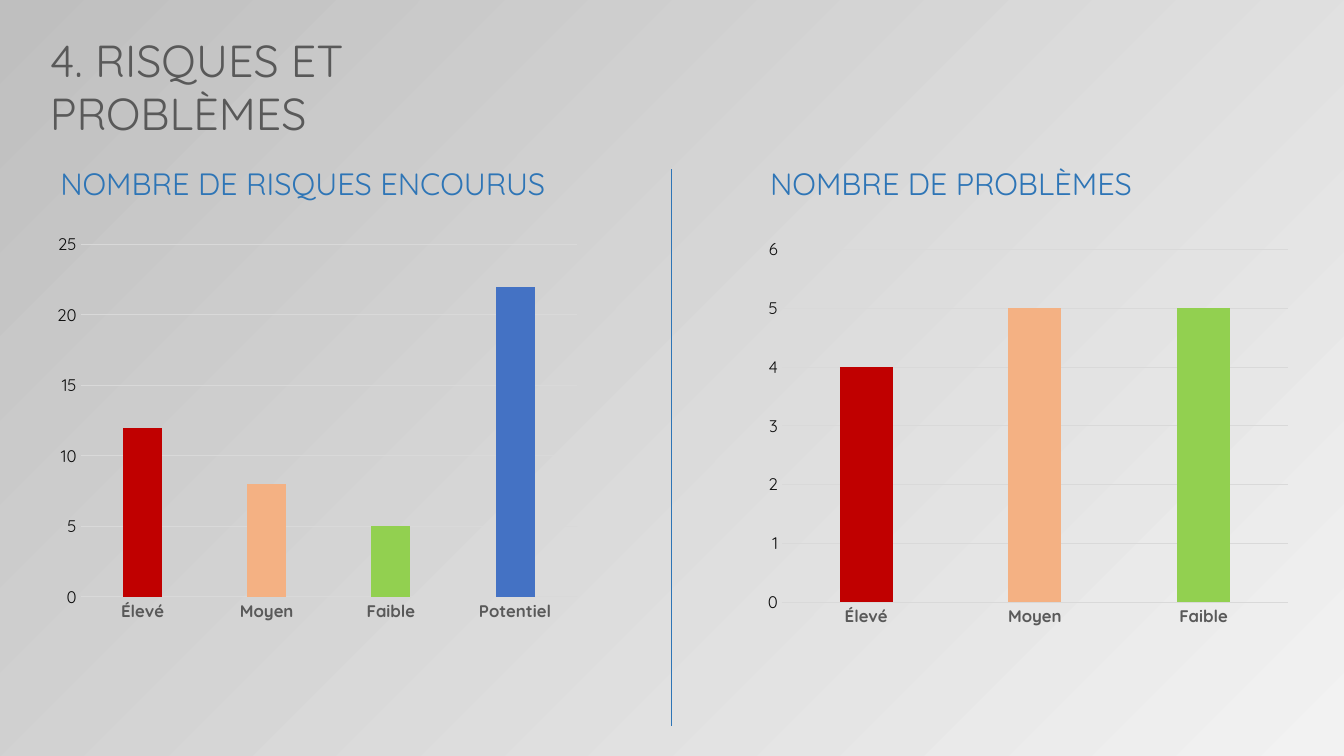
import pptx
import pptx.chart.data
import pptx.dml.color
import pptx.enum.chart
import pptx.enum.text
import pptx.oxml
import pptx.util

RGBColor = pptx.dml.color.RGBColor
EMU_PER_PX = 9525
FONT = "Quicksand"

LIGHT_GREY = RGBColor(0xF2, 0xF2, 0xF2)
MID_GREY = RGBColor(0xBF, 0xBF, 0xBF)
GRID_GREY = RGBColor(0xD9, 0xD9, 0xD9)
TEXT_GREY = RGBColor(0x59, 0x59, 0x59)
NEAR_BLACK = RGBColor(0x0D, 0x0D, 0x0D)
BLACK = RGBColor(0x00, 0x00, 0x00)
HEADING_BLUE = RGBColor(0x2E, 0x75, 0xB6)
BAR_BLUE = RGBColor(0x44, 0x72, 0xC4)
RED = RGBColor(0xC0, 0x00, 0x00)
ORANGE = RGBColor(0xF4, 0xB1, 0x83)
GREEN = RGBColor(0x92, 0xD0, 0x50)

LEVELS = {"Élevé": RED, "Moyen": ORANGE, "Faible": GREEN, "Potentiel": BAR_BLUE}


def px(*lengths):
    return [pptx.util.Emu(length * EMU_PER_PX) for length in lengths]


def set_attributes(target, values):
    for name, value in values.items():
        setattr(target, name, value)


def format_font(font, size, color, bold=False):
    set_attributes(font, {"name": FONT, "size": pptx.util.Pt(size), "bold": bold})
    font.color.rgb = color


def format_line(line, color, width):
    line.color.rgb = color
    line.width = pptx.util.Pt(width)


def set_background(slide):
    fill = slide.background.fill
    fill.gradient()
    fill.gradient_angle = 135
    for stop, color, position in zip(fill.gradient_stops, (LIGHT_GREY, MID_GREY), (0, 1)):
        stop.color.rgb = color
        stop.position = position


def add_text(slide, box, text, size, color):
    frame = slide.shapes.add_textbox(*px(*box)).text_frame
    set_attributes(frame, {
        "word_wrap": True,
        "auto_size": pptx.enum.text.MSO_AUTO_SIZE.SHAPE_TO_FIT_TEXT,
    })
    run = frame.paragraphs[0].add_run()
    run.text = text
    format_font(run.font, size, color)


def add_level_chart(slide, box, values, maximum, step):
    categories = list(LEVELS)[:len(values)]
    data = pptx.chart.data.CategoryChartData()
    data.categories = categories
    data.add_series("Series 1", values)
    chart = slide.shapes.add_chart(
        pptx.enum.chart.XL_CHART_TYPE.COLUMN_CLUSTERED, *px(*box), data).chart
    set_attributes(chart, {"has_title": False, "has_legend": False})
    format_font(chart.font, 10, BLACK)

    plot = chart.plots[0]
    set_attributes(plot, {"gap_width": 219, "overlap": -5, "vary_by_categories": False})
    series = plot.series[0]
    series.format.fill.solid()
    series.format.fill.fore_color.rgb = BAR_BLUE
    for index, category in enumerate(categories):
        if LEVELS[category] != BAR_BLUE:
            fill = series.points[index].format.fill
            fill.solid()
            fill.fore_color.rgb = LEVELS[category]

    no_tick = pptx.enum.chart.XL_TICK_MARK.NONE
    for axis, color, bold in ((chart.category_axis, TEXT_GREY, True),
                              (chart.value_axis, NEAR_BLACK, False)):
        set_attributes(axis, {"major_tick_mark": no_tick, "minor_tick_mark": no_tick})
        format_font(axis.tick_labels.font, 12, color, bold)
    format_line(chart.category_axis.format.line, GRID_GREY, 0.75)
    value_axis = chart.value_axis
    set_attributes(value_axis, {
        "minimum_scale": 0,
        "maximum_scale": maximum,
        "major_unit": step,
        "has_major_gridlines": True,
    })
    value_axis.format.line.fill.background()
    format_line(value_axis.major_gridlines.format.line, GRID_GREY, 0.75)


def add_divider(slide, x, top, bottom):
    connector = slide.shapes.add_connector(
        pptx.enum.shapes.MSO_CONNECTOR.STRAIGHT, *px(x, top, x, bottom))
    format_line(connector.line, HEADING_BLUE, 0.5)
    properties = connector._element.spPr
    properties.append(pptx.oxml.parse_xml(
        '<a:effectLst xmlns:a="http://schemas.openxmlformats.org/drawingml/2006/main"/>'))


def main():
    presentation = pptx.Presentation()
    width, height = px(1280, 720)
    set_attributes(presentation, {"slide_width": width, "slide_height": height})
    slide = presentation.slides.add_slide(presentation.slide_layouts[6])
    set_background(slide)

    add_level_chart(slide, (44, 215, 516, 385), (12, 8, 5, 22), 25, 5)
    add_text(slide, (48, 152, 542, 45), "NOMBRE DE RISQUES ENCOURUS", 22, HEADING_BLUE)
    add_level_chart(slide, (721, 220, 516, 385), (4, 5, 5), 6, 1)
    add_text(slide, (724, 152, 426, 45), "NOMBRE DE PROBLÈMES", 22, HEADING_BLUE)
    add_text(slide, (38, 26, 417, 61), "4. RISQUES ET PROBLÈMES", 32, TEXT_GREY)
    add_divider(slide, 639, 161, 691)
    presentation.save("out.pptx")


if __name__ == "__main__":
    main()
